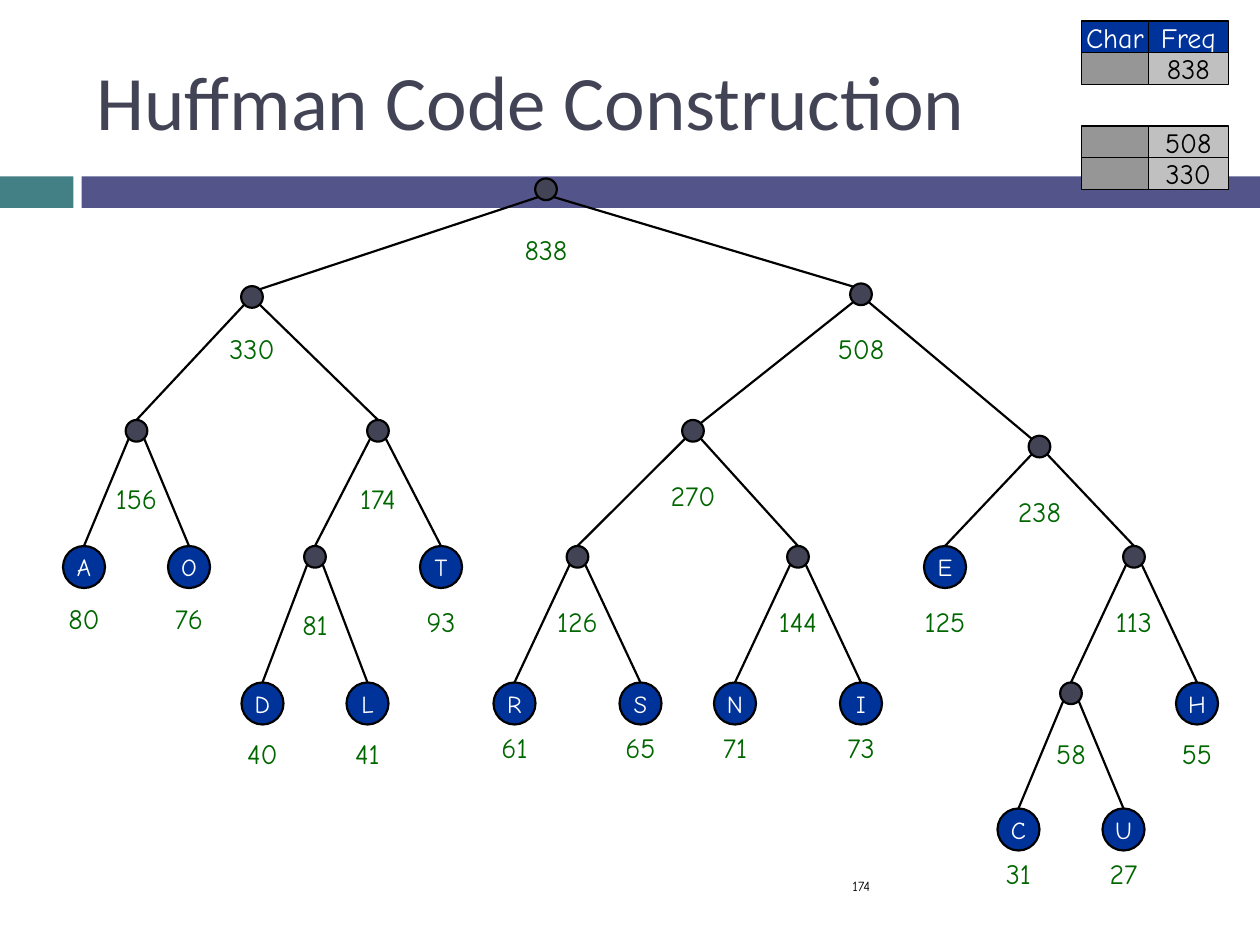
from collections import namedtuple

from lxml import etree
from pptx import Presentation
from pptx.dml.color import RGBColor
from pptx.enum import shapes, text
from pptx.oxml.ns import qn
from pptx.util import Pt

COLORS = {
    "teal": "438086", "purple": "53548A", "slate": "424456", "blue": "003399",
    "green": "006600", "black": "000000", "white": "FFFFFF",
    "light": "C0C0C0", "gray": "969696",
}
HAND = "Comic Neue"
INNER, LEAF = 12.4, 24
CORNER = INNER / 2 * 0.71

# x is the centre and y the top, both inside the tree's box; gap runs from y to the label.
# Edges below a "wide" node meet the near shoulder of the child instead of its top.
Node = namedtuple("Node", "x y gap freq char children wide", defaults=("", (), False))


def leaf(char, freq, x, y, gap):
    return Node(x, y, gap, freq, char)


def inner(freq, x, y, gap, left, right, wide=False):
    return Node(x, y, gap, freq, "", (left, right), wide)


TREE = inner(
    838, 276, 0, 27.6,
    inner(330, 108, 61.5, 22.5,
          inner(156, 42, 138, 31.4,
                leaf("A", 80, 12, 210, 28), leaf("O", 76, 72, 210, 28)),
          inner(174, 180, 138, 31.4,
                inner(81, 144, 210, 31.4,
                      leaf("D", 40, 114, 288, 27.6), leaf("L", 41, 174, 288, 27.6)),
                leaf("T", 93, 216, 210, 30))),
    inner(508, 456, 60, 24,
          inner(270, 360, 138, 30,
                inner(126, 294, 210, 30,
                      leaf("R", 61, 258, 288, 24), leaf("S", 65, 330, 288, 24)),
                inner(144, 420, 210, 30,
                      leaf("N", 71, 384, 288, 24), leaf("I", 73, 456, 288, 24))),
          inner(238, 558, 147, 30,
                leaf("E", 125, 504, 210, 30),
                inner(113, 612, 210, 30,
                      inner(58, 576, 288, 27.6,
                            leaf("C", 31, 546, 360, 24), leaf("U", 27, 606, 360, 24)),
                      leaf("H", 55, 648, 288, 27.6))),
          wide=True),
    wide=True)


def rgb(name):
    return RGBColor.from_string(COLORS[name])


def write(shape, words, size, color, font=HAND, align=text.PP_ALIGN.CENTER,
          anchor=text.MSO_ANCHOR.MIDDLE, wrap=True):
    frame = shape.text_frame
    frame.word_wrap = wrap
    frame.vertical_anchor = anchor
    para = frame.paragraphs[0]
    para.text = str(words)
    para.alignment = align
    para.font.size = Pt(size)
    para.font.name = font
    para.font.color.rgb = rgb(color)


def add_text(page, box, words, size, color, **style):
    write(page.shapes.add_textbox(*map(Pt, box)), words, size, color, **style)


def add_filled(page, kind, box, fill, line=None):
    """Add a preset shape; without a line width it has no outline."""
    shape = page.shapes.add_shape(kind, *map(Pt, box))
    shape.shadow.inherit = False
    shape.fill.solid()
    shape.fill.fore_color.rgb = rgb(fill)
    if line:
        shape.line.color.rgb = rgb("black")
        shape.line.width = Pt(line)
    else:
        shape.line.fill.background()
    return shape


def add_edge(page, start, end):
    edge = page.shapes.add_connector(shapes.MSO_CONNECTOR.STRAIGHT, *map(Pt, start + end))
    edge.line.color.rgb = rgb("black")
    edge.line.width = Pt(1.25)
    etree.SubElement(edge._element.spPr, qn("a:effectLst"))


def add_header(page, box):
    left, top, width, height = box
    rect = shapes.MSO_SHAPE.RECTANGLE
    add_filled(page, rect, (left, top + 100.8, 42, 18), "teal")
    add_filled(page, rect, (left + 46.6, top + 100.8, width - 46.6, 18), "purple")
    add_text(page, (left + 48, top + 18, 642, 78), "Huffman Code Construction", 44,
             "slate", font="Calibri", align=text.PP_ALIGN.LEFT)


def add_tree(page, origin, node):
    """Draw the node, its edges and label, then its subtrees."""
    left, top = origin
    x, y = left + node.x, top + node.y
    size = LEAF if node.char else INNER
    circle = add_filled(page, shapes.MSO_SHAPE.OVAL, (x - size / 2, y, size, size),
                        "blue" if node.char else "slate", 1.25)
    if node.char:
        write(circle, node.char, 14, "white", wrap=False)
    add_text(page, (x - 24, y + node.gap, 48, 26.4), node.freq, 16, "green",
             anchor=text.MSO_ANCHOR.TOP)
    for side, child in zip((-1, 1), node.children):
        start = (x + side * CORNER, y + INNER / 2 + CORNER)
        end = (left + child.x, top + child.y)
        if node.wide:
            end = (end[0] - side * CORNER, end[1] + INNER / 2 - CORNER)
        add_edge(page, start, end)
        add_tree(page, origin, child)


def add_frequencies(page, box, rows):
    """Stack rows of a character cell and a frequency cell; None words leave a cell empty."""
    left, top, width, row_height = box
    char_width = 38.2
    columns = ((left, char_width), (left + char_width, width - char_width))
    for index, row in enumerate(rows):
        header = row[0] is not None
        fills = ("blue", "blue") if header else ("gray", "light")
        for (x, cell_width), words, fill in zip(columns, row, fills):
            cell = add_filled(page, shapes.MSO_SHAPE.RECTANGLE,
                              (x, top + index * row_height, cell_width, row_height),
                              fill, 0.75)
            if words is not None:
                write(cell, words, 16, "white" if header else "black", wrap=False)


def main():
    deck = Presentation()
    deck.slide_width, deck.slide_height = Pt(720), Pt(540)
    page = deck.slides.add_slide(deck.slide_layouts[6])
    add_header(page, (0, 0, 720, 120))
    add_text(page, (480, 492, 210, 28.8), 174, 8, "black", align=text.PP_ALIGN.LEFT)
    add_tree(page, (36, 102), TREE)
    add_frequencies(page, (618, 12, 84, 18.2), [("Char", "Freq"), (None, 838)])
    add_frequencies(page, (618, 72, 84, 18.2), [(None, 508), (None, 330)])
    deck.save("out.pptx")


if __name__ == "__main__":
    main()
